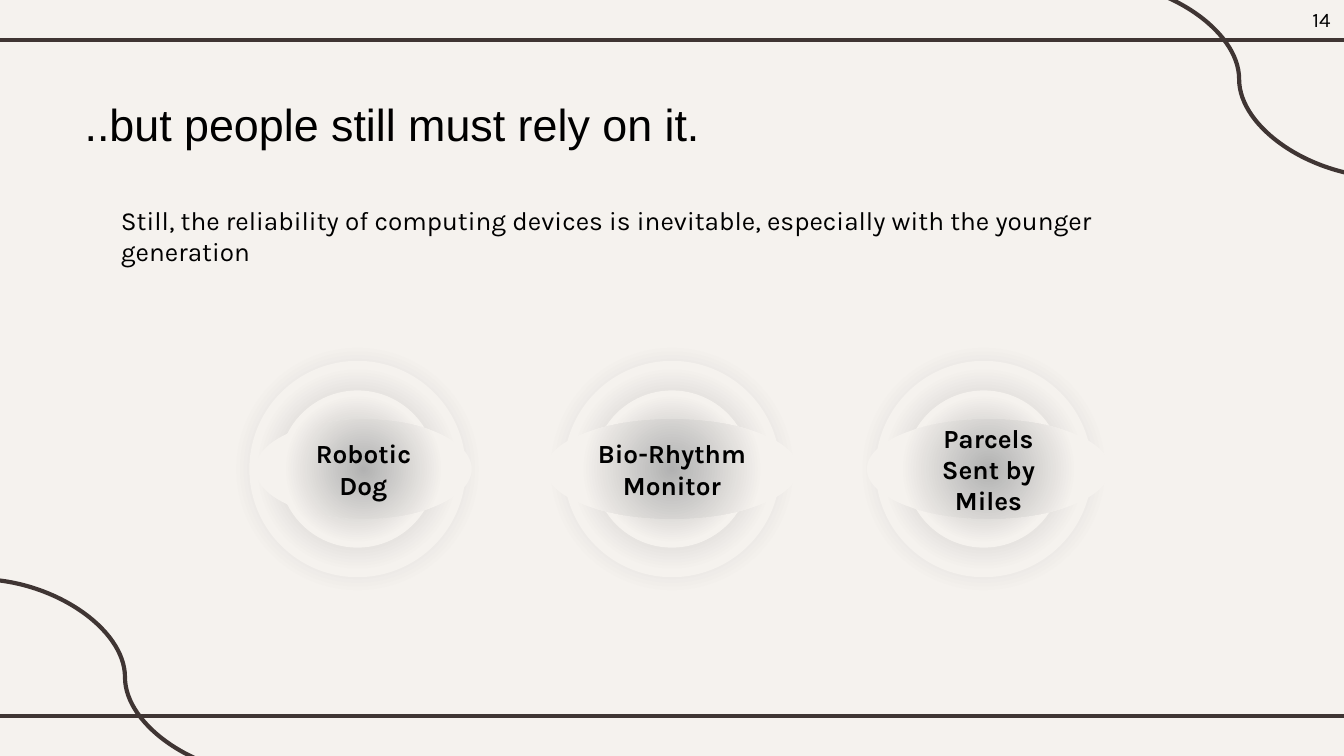
from lxml import etree
from pptx import Presentation
from pptx.dml.color import RGBColor
from pptx.enum.shapes import MSO_CONNECTOR, MSO_SHAPE
from pptx.enum.text import MSO_ANCHOR, MSO_AUTO_SIZE, PP_ALIGN
from pptx.oxml import parse_xml
from pptx.oxml.ns import nsdecls, qn
from pptx.util import Inches, Pt

STRAIGHT, CURVE = MSO_CONNECTOR.STRAIGHT, MSO_CONNECTOR.CURVE
ELLIPSE = MSO_SHAPE.OVAL
LEFT, CENTER, RIGHT = PP_ALIGN.LEFT, PP_ALIGN.CENTER, PP_ALIGN.RIGHT
TOP, MIDDLE = MSO_ANCHOR.TOP, MSO_ANCHOR.MIDDLE
NO_AUTOFIT = MSO_AUTO_SIZE.NONE

COLORS = {"paper": "F5F2EE", "line": "3F3533", "text": "000000", "glow": "B2B2B2"}
WIDTH = 10
HEIGHT = WIDTH * 9 / 16


def place(shape, left, top, width, height):
    shape.left, shape.top = Inches(left), Inches(top)
    shape.width, shape.height = Inches(width), Inches(height)


def write_text(shape, text, size=14, font="Karla", bold=False, align=LEFT, anchor=TOP):
    frame = shape.text_frame
    frame.word_wrap = True
    frame.auto_size = NO_AUTOFIT
    frame.vertical_anchor = anchor
    frame.margin_left = frame.margin_right = Inches(0.1)
    frame.margin_top = frame.margin_bottom = Inches(0.1 if anchor == MIDDLE else 0.05)
    para = frame.paragraphs[0]
    para.alignment = align
    para.space_before = Pt(0)
    span = para.add_run()
    span.text = text
    span.font.size, span.font.name, span.font.bold = Pt(size), font, bold
    span.font.color.rgb = RGBColor.from_string(COLORS["text"])
    return para


def add_line(page, kind, left, top, right, bottom):
    line = page.shapes.add_connector(
        kind, Inches(left), Inches(top), Inches(right), Inches(bottom))
    line.line.color.rgb = RGBColor.from_string(COLORS["line"])
    line.line.width = Pt(2.25)
    etree.SubElement(line._element.spPr, qn("a:effectLst"))


def add_glow(group, left, top, width, height):
    """Borderless ellipse whose grey centre fades into the paper colour."""
    glow = group.shapes.add_shape(
        ELLIPSE, Inches(left), Inches(top), Inches(width), Inches(height))
    glow.shadow.inherit = False
    glow.line.fill.background()
    glow.fill.gradient()
    old_fill = glow._element.spPr.find(qn("a:gradFill"))
    old_fill.getparent().replace(old_fill, parse_xml(
        f'<a:gradFill {nsdecls("a")} rotWithShape="1"><a:gsLst>'
        f'<a:gs pos="0"><a:srgbClr val="{COLORS["glow"]}"/></a:gs>'
        f'<a:gs pos="67000"><a:srgbClr val="{COLORS["paper"]}"/></a:gs>'
        '</a:gsLst><a:path path="circle">'
        '<a:fillToRect l="50000" t="50000" r="50000" b="50000"/>'
        '</a:path></a:gradFill>'))
    return glow


def add_frame(page):
    """Rules along the top and bottom, and a curve in two corners."""
    for height in (5.33, 0.3):
        add_line(page, STRAIGHT, -0.08, height, WIDTH + 0.08, height)
    for left, top in ((8.13, -0.14), (-0.16, 4.31)):
        add_line(page, CURVE, left, top, left + 2.18, top + 1.46)


def add_heading(page, left, top):
    """Title and the sentence below it."""
    title, body = page.placeholders
    place(title, left, top, 5.18, 0.5)
    write_text(title, "..but people still must rely on it.", size=24, font="Arial")
    place(body, left + 0.27, top + 0.8, 8.33, 0.34)
    para = write_text(body, "Still, the reliability of computing devices is inevitable, "
                            "especially with the younger generation")
    properties = para._p.get_or_add_pPr()
    properties.set("marL", "0")
    properties.set("indent", "0")
    etree.SubElement(properties, qn("a:buNone"))


def add_badge(page, left, top, size, label, label_left, label_width):
    """Concentric glows with a flat labelled ellipse across the middle."""
    group = page.shapes.add_group_shape()
    for diameter in (size, 1.61, 1.17):
        inset = (size - diameter) / 2
        add_glow(group, left + inset, top + inset, diameter, diameter)
    label_height = 0.74
    plate = add_glow(group, left + label_left, top + (size - label_height) / 2,
                     label_width, label_height)
    write_text(plate, label, bold=True, align=CENTER, anchor=MIDDLE)


def add_page_number(page, left, top, width, height):
    box = page.shapes.add_textbox(
        Inches(left), Inches(top), Inches(width), Inches(height))
    write_text(box, "14", size=11, align=RIGHT)


def main():
    deck = Presentation()
    deck.slide_width, deck.slide_height = Inches(WIDTH), Inches(HEIGHT)
    page = deck.slides.add_slide(deck.slide_layouts[1])
    page.background.fill.solid()
    page.background.fill.fore_color.rgb = RGBColor.from_string(COLORS["paper"])

    add_frame(page)
    add_heading(page, 0.53, 0.67)

    # Badge left edge, label, label offset and label width
    badges = (
        (1.68, "Robotic Dog", 0.22, 1.61),
        (4.02, "Bio-Rhythm Monitor", 0.04, 1.88),
        (6.34, "Parcels Sent by Miles", 0.11, 1.81),
    )
    for left, label, label_left, label_width in badges:
        add_badge(page, left, 2.51, 1.96, label, label_left, label_width)

    add_page_number(page, 9.48, 0, 0.52, 0.29)
    deck.save("out.pptx")


if __name__ == "__main__":
    main()
